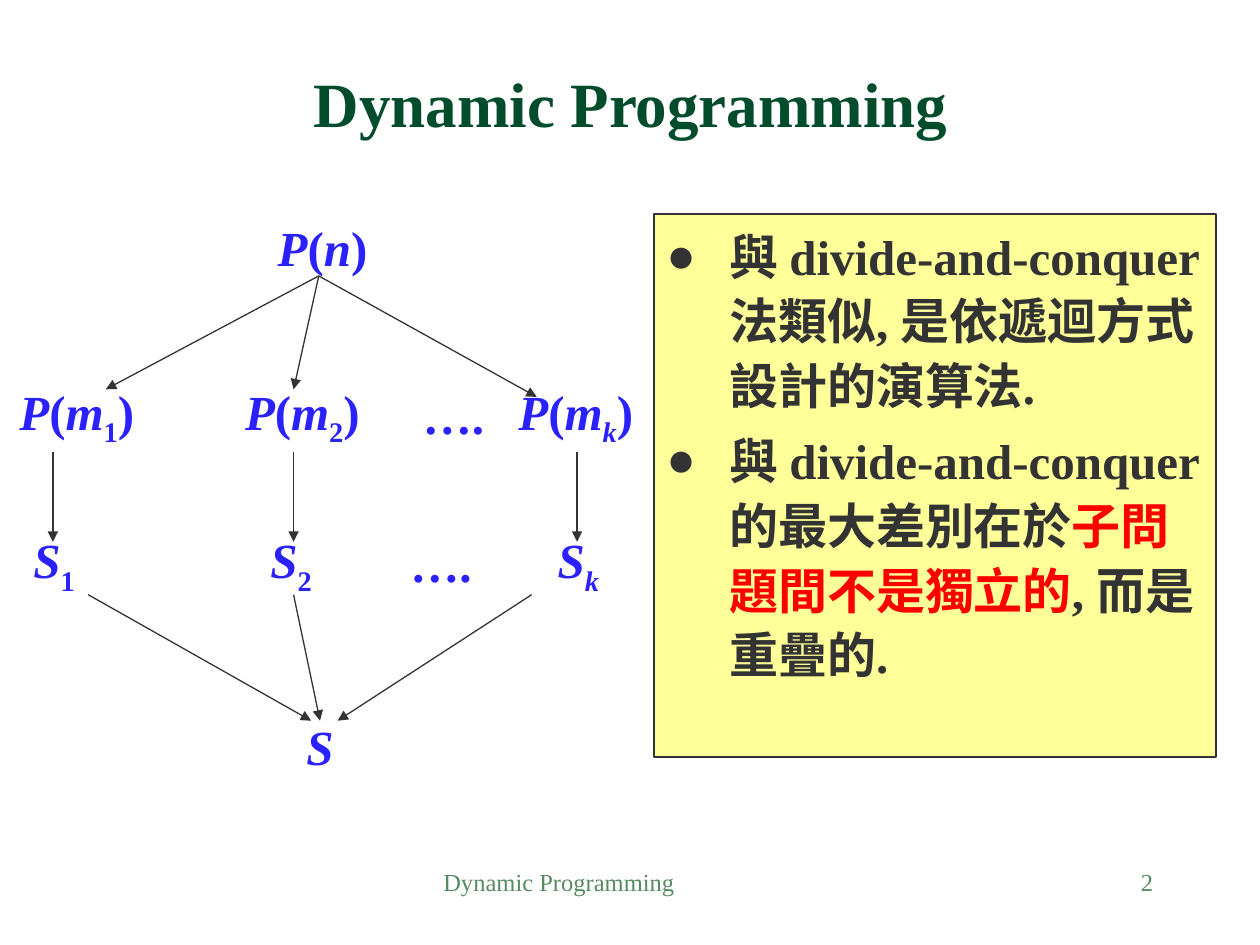
import pptx
import pptx.util
import pptx.dml.color
import pptx.enum.shapes
import pptx.enum.text
import pptx.oxml
import pptx.oxml.ns
from lxml import etree

Inches, Pt = pptx.util.Inches, pptx.util.Pt
ALIGN, ANCHOR = pptx.enum.text.PP_ALIGN, pptx.enum.text.MSO_ANCHOR
qn = pptx.oxml.ns.qn

GREEN, PALE_GREEN, BLUE = "004C2B", "578963", "2B21FD"
INK, RED, YELLOW = "333333", "FF0000", "FFFF99"


def rgb(value):
    return pptx.dml.color.RGBColor.from_string(value)


class Slide:
    """Holds the style and the current slide."""

    font = "Times New Roman"

    def __init__(self, prs):
        self.shapes = prs.slides.add_slide(prs.slide_layouts[6]).shapes

    def run(self, p, text, size, color, bold=True, italic=False, sub=False):
        r = p.add_run()
        r.text = text
        f = r.font
        f.name, f.size, f.bold, f.italic = self.font, Pt(size), bold, italic
        f.color.rgb = rgb(color)
        if sub:
            r._r.get_or_add_rPr().set("baseline", "-25000")

    def box(self, x, y, w, h, align, anchor, wrap=True):
        sp = self.shapes.add_textbox(Inches(x), Inches(y), Inches(w), Inches(h))
        tf = sp.text_frame
        tf.word_wrap, tf.vertical_anchor = wrap, anchor
        p = tf.paragraphs[0]
        p.alignment = align
        return p

    def text(self, x, y, w, h, text, size, color, align=ALIGN.LEFT,
             anchor=ANCHOR.TOP, bold=False, before=0):
        p = self.box(x, y, w, h, align, anchor)
        p.space_before = Pt(before)
        self.run(p, text, size, color, bold)

    def node(self, cx, cy, name, arg="", sub=""):
        """A formula such as P(m1) or S1, centred on a point."""
        w, h = 1.2, 0.57
        p = self.box(cx - w / 2, cy - h / 2, w, h, ALIGN.CENTER,
                     ANCHOR.MIDDLE, wrap=False)
        parts = [(name, name.isalpha(), False)]
        if arg:
            parts += [("(", False, False), (arg, True, False)]
        if sub:
            parts.append((sub, sub.isalpha(), True))
        if arg:
            parts.append((")", False, False))
        for text, italic, low in parts:
            self.run(p, text, 28, BLUE, italic=italic, sub=low)

    def arrow(self, start, end):
        points = [Inches(v) for v in (*start, *end)]
        c = self.shapes.add_connector(
            pptx.enum.shapes.MSO_CONNECTOR.STRAIGHT, *points)
        c.line.color.rgb, c.line.width = rgb(INK), Pt(0.75)
        etree.SubElement(c.line._get_or_add_ln(), qn("a:tailEnd"), type="triangle")
        etree.SubElement(c._element.spPr, qn("a:effectLst"))

    def bullets(self, x, y, w, h, items):
        sp = self.shapes.add_shape(pptx.enum.shapes.MSO_SHAPE.RECTANGLE,
                                   Inches(x), Inches(y), Inches(w), Inches(h))
        sp.shadow.inherit = False
        sp.fill.solid()
        sp.fill.fore_color.rgb = rgb(YELLOW)
        sp.line.color.rgb, sp.line.width = rgb(INK), Pt(1)
        tf = sp.text_frame
        tf.word_wrap, tf.vertical_anchor = True, ANCHOR.TOP
        for i, runs in enumerate(items):
            p = tf.add_paragraph() if i else tf.paragraphs[0]
            p.alignment = ALIGN.LEFT
            p.line_spacing, p.space_before = 1.1, Pt(6)
            pPr = p._p.get_or_add_pPr()
            pPr.set("marL", str(Inches(0.5)))
            pPr.set("indent", str(-Inches(0.5)))
            etree.SubElement(pPr, qn("a:buFont"), typeface=self.font)
            etree.SubElement(pPr, qn("a:buChar"), char="●")
            for text, color in runs:
                self.run(p, text, 28, color)


def main():
    prs = pptx.Presentation()
    prs.slide_width, prs.slide_height = Inches(10), Inches(7.5)
    s = Slide(prs)

    # Title and footer
    s.text(0.67, 0.58, 8.67, 0.58, "Dynamic Programming", 36, GREEN,
           ALIGN.CENTER, ANCHOR.BOTTOM, bold=True)
    s.text(3.42, 6.83, 3.17, 0.5, "Dynamic Programming", 14, PALE_GREEN, before=7)
    s.text(7.17, 6.83, 2.08, 0.5, "2", 14, PALE_GREEN, ALIGN.RIGHT, before=7)

    # Comparison with divide-and-conquer
    s.bullets(5.19, 1.7, 4.46, 4.31, [
        [("與 divide-and-conquer 法類似, 是依遞迴方式設計的演算法.", INK)],
        [("與 divide-and-conquer的最大差別在於", INK),
         ("子問題間不是獨立的", RED), (", 而是重疊的.", INK)],
    ])

    # Arrows: split the problem, solve the parts, combine the solutions
    for end in ((0.84, 3.09), (2.33, 3.09), (4.26, 3.15)):
        s.arrow((2.53, 2.19), end)
    for x in (0.42, 2.33, 4.58):
        s.arrow((x, 3.59), (x, 4.3))
    for x, end_x in ((0.7, 2.47), (2.33, 2.54), (4.22, 2.68)):
        s.arrow((x, 4.72), (end_x, 5.72))

    # Problem, subproblems, their solutions and the final solution
    s.node(2.56, 1.96, "P", "n")
    for sub, problem_x, solution_x in (("1", 0.61, 0.43), ("2", 2.4, 2.31),
                                       ("k", 4.57, 4.59)):
        s.node(problem_x, 3.29, "P", "m", sub)
        s.node(solution_x, 4.47, "S", sub=sub)
    s.node(3.6, 3.29, "….")
    s.node(3.5, 4.47, "….")
    s.node(2.54, 5.92, "S")

    prs.save("out.pptx")


if __name__ == "__main__":
    main()
